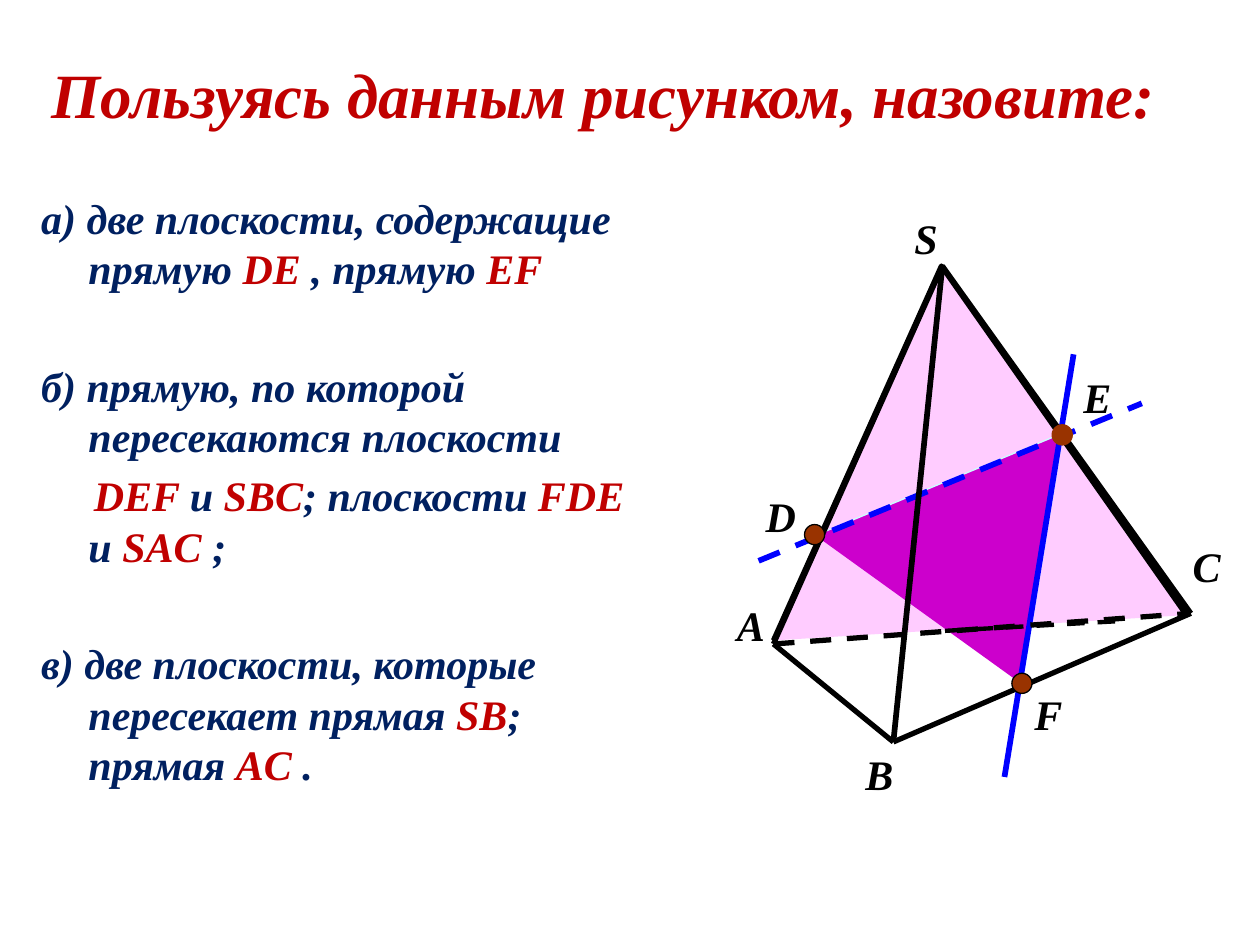
from pptx import Presentation
from pptx.dml.color import RGBColor
from pptx.enum.dml import MSO_LINE
from pptx.enum.shapes import MSO_CONNECTOR as Link, MSO_SHAPE as Form
from pptx.enum.text import MSO_ANCHOR as Anchor, PP_ALIGN as Align
from pptx.oxml.ns import qn
from pptx.util import Pt
from lxml.etree import SubElement

FACE = "Times New Roman"
RED = RGBColor(0xC0, 0, 0)
NAVY = RGBColor(0, 0x20, 0x60)
BLACK = RGBColor(0, 0, 0)
BLUE = RGBColor(0, 0, 0xFF)
PINK = RGBColor(0xFF, 0xCC, 0xFF)
PLUM = RGBColor(0xCC, 0, 0xCC)
PALE = RGBColor(0xCC, 0xFF, 0xFF)
BROWN = RGBColor(0x99, 0x33, 0)

TITLE = "Пользуясь данным рисунком, назовите:"
TASKS = [
    (0, -27, [("а) две плоскости, содержащие прямую ", NAVY), ("DE", RED),
              (" , прямую ", NAVY), ("EF", RED)]),
    (38.4, -27, [("б) прямую, по которой пересекаются плоскости", NAVY)]),
    (4.8, 3, [("DEF ", RED), ("и ", NAVY), ("SBC", RED),
              ("; плоскости ", NAVY), ("FDE ", RED), ("и ", NAVY),
              ("SAC ", RED), (";", NAVY)]),
    (38.4, -27, [("в) две плоскости, которые пересекает прямая ", NAVY),
                 ("SB", RED), ("; прямая ", NAVY), ("AC", RED), (" .", NAVY)]),
]

S, A, B, C = (538.5, 152), (442, 368), (510.5, 424), (680.5, 350.5)
D, E, F = (465.5, 305.5), (607, 248.5), (584, 390.5)
FACES = [
    ([(442, 366), (538, 152), (678, 351.5)], PINK, BLACK, 3),
    ([(466, 306), (607.5, 247.5), (584, 391)], PLUM, PALE, 0.75),
]
CUTS = [
    ((574, 444), (613.5, 202.5), BLUE, 3.25, False),
    ((433.5, 320.5), (652.5, 230.5), BLUE, 3.25, True),
]
EDGES = [
    (S, A, BLACK, 3, False), (S, C, BLACK, 3, False),
    (A, C, BLACK, 3, True), (S, B, BLACK, 3.25, False),
    (A, B, BLACK, 3, False), (B, C, BLACK, 3, False),
    ((540, 360.5), (638.5, 355), BLACK, 2.5, True),
]
DOTS = [(D, BLACK), (E, BROWN), (F, BLACK)]
DOT = 11.5
MARKS = [
    ("А", 414, 339), ("С", 674.5, 305.5), ("В", 487.5, 424),
    ("S", 515.5, 118), ("D", 430.5, 277), ("F", 584, 390), ("E", 612, 209),
]


def style(par, size, tone=None):
    font = par.font
    font.name, font.size = FACE, Pt(size)
    font.bold = font.italic = True
    if tone is not None:
        font.color.rgb = tone
    par.alignment = Align.LEFT


def place(shape, left, top, width, height):
    shape.left, shape.top = Pt(left), Pt(top)
    shape.width, shape.height = Pt(width), Pt(height)


def paint(shape, fill, line, width):
    shape.shadow.inherit = False
    shape.fill.solid()
    shape.fill.fore_color.rgb = fill
    shape.line.color.rgb = line
    shape.line.width = Pt(width)


def draw(start, end, tone, width, dashed):
    line = shapes.add_connector(Link.STRAIGHT, *map(Pt, start + end))
    line.line.color.rgb = tone
    line.line.width = Pt(width)
    if dashed:
        line.line.dash_style = MSO_LINE.DASH
    SubElement(line._element.spPr, qn("a:effectLst"))


deck = Presentation()
deck.slide_width, deck.slide_height = Pt(720), Pt(540)
slide = deck.slides.add_slide(deck.slide_layouts[5])
shapes = slide.shapes

title = shapes.title
place(title, 22, 28, 680, 51)
title.text_frame.text = TITLE
title.text_frame.vertical_anchor = Anchor.TOP
style(title.text_frame.paragraphs[0], 36, RED)

for points, fill, line, width in FACES:
    pen = shapes.build_freeform(*map(Pt, points[0]))
    pen.add_line_segments([tuple(map(Pt, p)) for p in points[1:]], close=False)
    paint(pen.convert_to_shape(), fill, line, width)

for cut in CUTS:
    draw(*cut)

body = shapes.add_textbox(Pt(16.5), Pt(106.5), Pt(354), Pt(384.5)).text_frame
body.word_wrap = True
for i, (gap, indent, parts) in enumerate(TASKS):
    par = body.add_paragraph() if i else body.paragraphs[0]
    style(par, 24)
    par.space_before = Pt(gap)
    props = par._p.get_or_add_pPr()
    props.set("marL", str(Pt(27)))
    props.set("indent", str(Pt(indent)))
    for words, tone in parts:
        run = par.add_run()
        run.text = words
        run.font.color.rgb = tone

for edge in EDGES:
    draw(*edge)

for (x, y), rim in DOTS:
    dot = shapes.add_shape(Form.OVAL, Pt(x - DOT / 2), Pt(y - DOT / 2),
                           Pt(DOT), Pt(DOT))
    paint(dot, BROWN, rim, 0.75)

for name, x, y in MARKS:
    mark = shapes.add_textbox(Pt(x), Pt(y), Pt(45), Pt(36)).text_frame
    mark.word_wrap = True
    mark.text = name
    style(mark.paragraphs[0], 24, BLACK)

deck.save("out.pptx")
